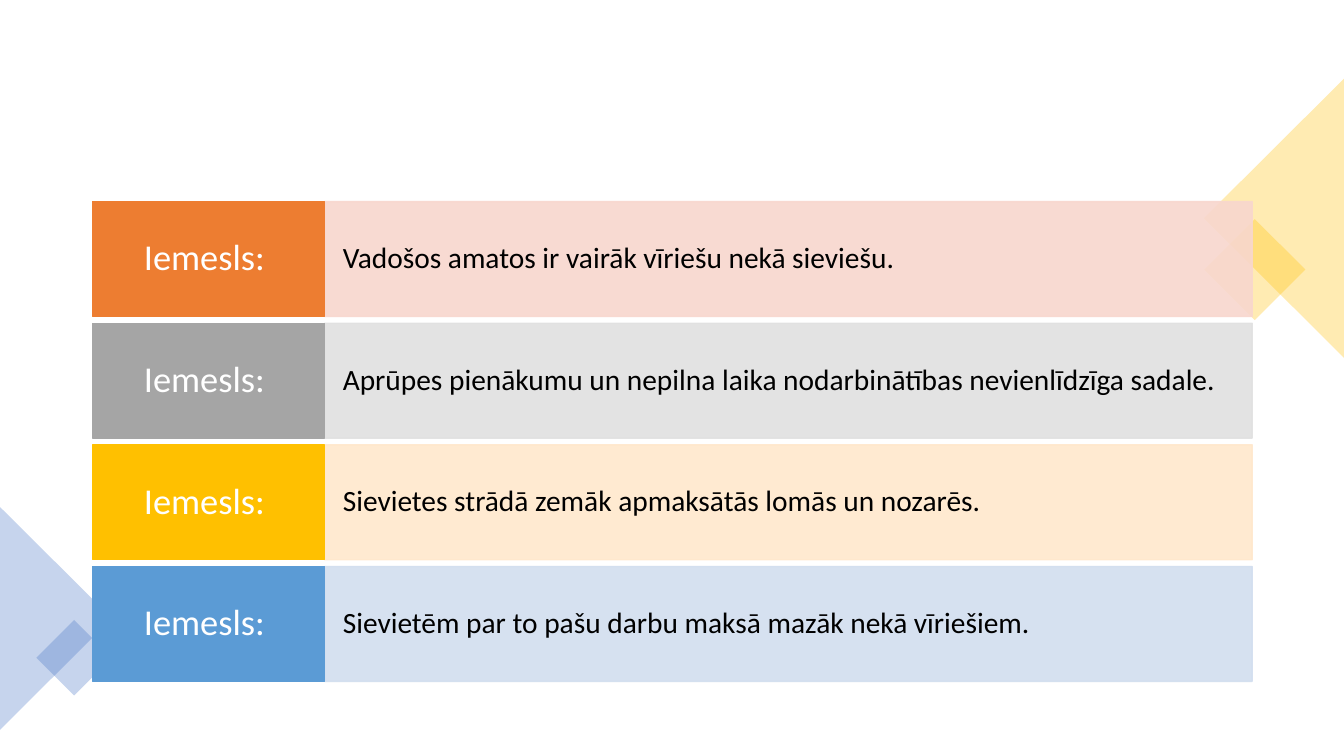
from lxml.etree import SubElement
from pptx import Presentation
from pptx.dml.color import RGBColor
from pptx.enum.shapes import MSO_SHAPE as Preset
from pptx.enum.text import MSO_ANCHOR as Anchor, PP_ALIGN as Align
from pptx.oxml.ns import qn
from pptx.util import Inches, Pt

LABEL = "Iemesls: "
REASONS = [
    ("ED7D31", "F8D7CE", "Vadošos amatos ir vairāk vīriešu nekā sieviešu."),
    ("A5A5A5", "E1E1E1", "Aprūpes pienākumu un nepilna laika nodarbinātības nevienlīdzīga sadale."),
    ("FFC000", "FFE8CC", "Sievietes strādā zemāk apmaksātās lomās un nozarēs."),
    ("5B9BD5", "D2DEEF", "Sievietēm par to pašu darbu maksā mazāk nekā vīriešiem."),
]
LABEL_LEFT, LABEL_WIDTH, REASON_WIDTH = 0.92, 2.3, 9.2
FIRST_TOP, LAST_TOP, ROW_HEIGHT = 2, 5.62, 1.14


def color(value):
    return RGBColor.from_string(value)


class ReasonsPage:
    font = "Calibri"

    def __init__(self, deck):
        self.page = deck.slides.add_slide(deck.slide_layouts[6])

    def paint(self, fill, value, opacity):
        """Make a fill solid, with opacity in percent."""
        fill.solid()
        fill.fore_color.rgb = color(value)
        if opacity < 100:
            for tint in fill._xPr.iter(qn("a:srgbClr")):
                SubElement(tint, qn("a:alpha"), val=str(opacity * 1000))

    def shape(self, preset, left, top, width, height, fill, opacity=100, turn=0):
        shape = self.page.shapes.add_shape(
            preset, Inches(left), Inches(top), Inches(width), Inches(height))
        shape.shadow.inherit = False
        shape.rotation = turn
        self.paint(shape.fill, fill, opacity)
        shape.line.fill.background()
        return shape

    def cell(self, left, top, width, fill, text, size, ink, align, insets, opacity=100):
        """Draw an outlined bar with one line of text; insets are (side, top and bottom)."""
        box = self.shape(Preset.RECTANGLE, left, top, width, ROW_HEIGHT, fill, opacity)
        self.paint(box.line.fill, fill, opacity)
        box.line.width = Pt(1)
        frame = box.text_frame
        frame.word_wrap = True
        frame.vertical_anchor = Anchor.MIDDLE
        frame.margin_left = frame.margin_right = Inches(insets[0])
        frame.margin_top = frame.margin_bottom = Inches(insets[1])
        para = frame.paragraphs[0]
        para.alignment = align
        para.line_spacing = 0.9
        span = para.add_run()
        span.text = text
        span.font.name = self.font
        span.font.size = Pt(size)
        span.font.color.rgb = color(ink)

    def reason(self, top, strong, pale, text):
        self.cell(LABEL_LEFT + LABEL_WIDTH, top, REASON_WIDTH, pale, text,
                  21, "000000", Align.LEFT, (0.18, 0.29), opacity=90)
        self.cell(LABEL_LEFT, top, LABEL_WIDTH, strong, LABEL,
                  26, "FFFFFF", Align.CENTER, (0.12, 0.11))


def main():
    deck = Presentation()
    deck.slide_width, deck.slide_height = Inches(13.33), Inches(7.5)
    page = ReasonsPage(deck)

    gold, blue = "FFC000", "4472C4"
    page.shape(Preset.RECTANGLE, 12.09, 2.32, 0.71, 0.71, gold, 30, 45)
    page.shape(Preset.ISOSCELES_TRIANGLE, 11.25, 1.47, 2.77, 1.39, gold, 30, 270)
    page.shape(Preset.ISOSCELES_TRIANGLE, -0.55, 5.58, 2.21, 1.11, blue, 30, 90)
    page.shape(Preset.RECTANGLE, 0.47, 6.26, 0.53, 0.53, blue, 30, 45)

    pitch = (LAST_TOP - FIRST_TOP) / (len(REASONS) - 1)
    for row, (strong, pale, text) in enumerate(REASONS):
        page.reason(FIRST_TOP + row * pitch, strong, pale, text)

    deck.save("out.pptx")


if __name__ == "__main__":
    main()
